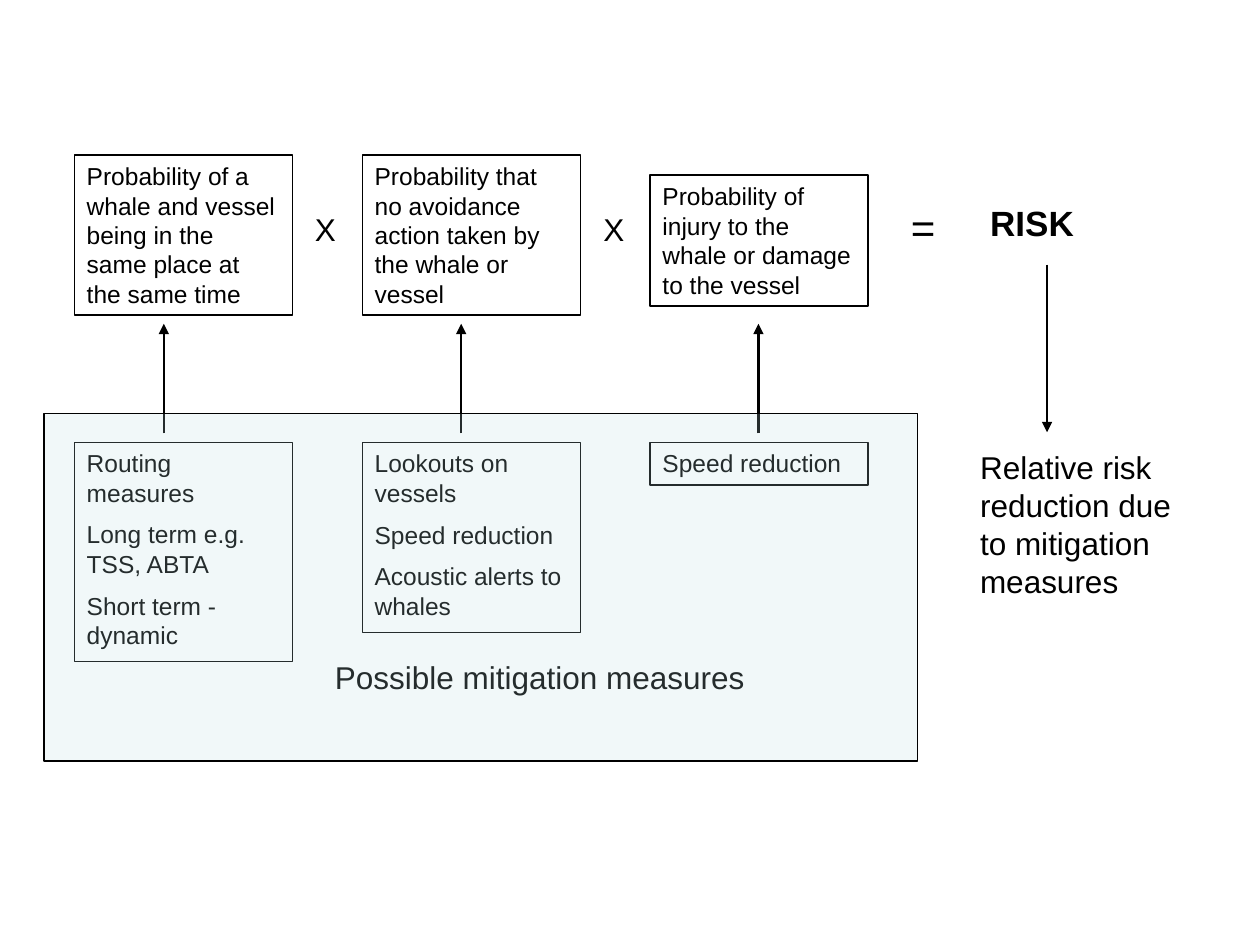
from pptx import Presentation
from pptx import util as u
from pptx.dml.color import RGBColor
from pptx.enum import shapes, text
from pptx.oxml.ns import qn
from lxml import etree

BLACK = RGBColor(0x00, 0x00, 0x00)
PALE_TEAL = RGBColor(0xBB, 0xE0, 0xE3)

deck = Presentation()
deck.slide_width, deck.slide_height = u.Inches(10), u.Inches(7.5)
slide = deck.slides.add_slide(deck.slide_layouts[6])


def add_words(place, paragraphs, size, bold=False, outlined=False):
    box = slide.shapes.add_textbox(*[u.Inches(n) for n in place])
    if outlined:
        box.line.color.rgb = BLACK
        box.line.width = u.Pt(0.75)
    frame = box.text_frame
    frame.word_wrap = True
    frame.auto_size = text.MSO_AUTO_SIZE.SHAPE_TO_FIT_TEXT
    frame.text = "\n".join(paragraphs)
    for index, paragraph in enumerate(frame.paragraphs):
        paragraph.space_before = u.Pt(size / 2 if index else 0)
        paragraph.font.name = "Arial"
        paragraph.font.size = u.Pt(size)
        paragraph.font.bold = bold
        paragraph.font.color.rgb = BLACK


def add_arrow(x, start, end):
    arrow = slide.shapes.add_connector(
        shapes.MSO_CONNECTOR.STRAIGHT,
        u.Inches(x), u.Inches(start), u.Inches(x), u.Inches(end))
    arrow.line.color.rgb = BLACK
    arrow.line.width = u.Pt(1.25)
    properties = arrow._element.spPr
    etree.SubElement(properties.find(qn("a:ln")), qn("a:tailEnd"), type="triangle")
    etree.SubElement(properties, qn("a:effectLst"))


factors = [
    (1.23, 1.27, "Probability of a whale and vessel being in the same place at the same time",
     1.74, ["Routing measures", "Long term e.g. TSS, ABTA", "Short term - dynamic"]),
    (1.23, 1.27, "Probability that no avoidance action taken by the whale or vessel",
     1.51, ["Lookouts on vessels", "Speed reduction", "Acoustic alerts to whales"]),
    (1.39, 1.04, "Probability of injury to the whale or damage to the vessel",
     0.34, ["Speed reduction"]),
]
for column, (top, height, probability, measures_height, measures) in enumerate(factors):
    left = 0.59 + 2.285 * column
    add_words((left, top, 1.73, height), [probability], 14, outlined=True)
    add_words((left, 3.51, 1.73, measures_height), measures, 14, outlined=True)
    add_arrow(1.3 + 2.36 * column, 3.44, 2.57)

for times_left in (2.4, 4.69):
    add_words((times_left, 1.62, 0.39, 0.4), ["X"], 18)
add_words((7.13, 1.55, 0.39, 0.5), ["="], 24)
add_words((7.76, 1.55, 1.49, 0.43), ["RISK"], 20, bold=True)
add_arrow(8.31, 2.1, 3.43)
add_words((7.68, 3.51, 1.81, 1.3),
          ["Relative risk reduction due to mitigation measures"], 18)
add_words((2.56, 5.17, 3.94, 0.4), ["Possible mitigation measures"], 18)

mitigation_area = slide.shapes.add_shape(
    shapes.MSO_SHAPE.RECTANGLE,
    u.Inches(0.35), u.Inches(3.28), u.Inches(6.93), u.Inches(2.76))
mitigation_area.shadow.inherit = False
mitigation_area.fill.solid()
mitigation_area.fill.fore_color.rgb = PALE_TEAL
tint = mitigation_area._element.spPr.find(qn("a:solidFill")).find(qn("a:srgbClr"))
etree.SubElement(tint, qn("a:alpha"), val="20000")
mitigation_area.line.color.rgb = BLACK
mitigation_area.line.width = u.Pt(0.75)

deck.save("out.pptx")
